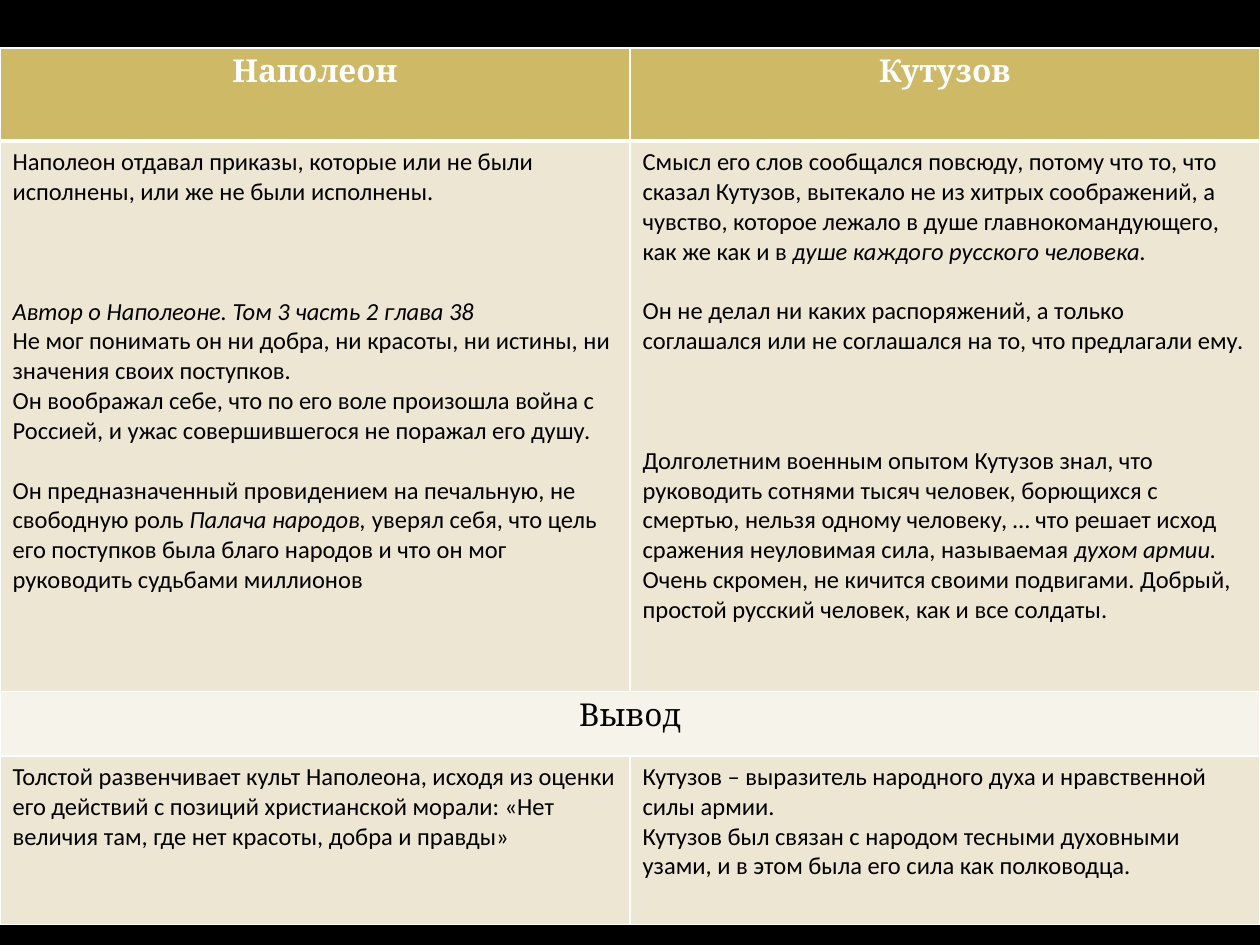
from dataclasses import dataclass

import pptx
import pptx.dml.color
import pptx.enum.text
import pptx.oxml
import pptx.oxml.ns
import pptx.util
from pptx.util import Inches


@dataclass(frozen=True)
class Theme:
    background: str = "000000"
    header: str = "CEB966"
    body: str = "EDE6D3"
    band: str = "F6F3EA"
    light: str = "FFFFFF"
    dark: str = "000000"
    heading_font: str = "Cambria"
    body_font: str = "Calibri"
    heading_size: int = 18
    body_size: int = 14
    line_pitch: float = 17.1


THEME = Theme()
HEADINGS = ["Наполеон", "Кутузов"]
CONCLUSION = "Вывод"

# Each paragraph: empty lines above it, then text with *italic* parts.
COMPARISON = [
    [
        (0, "Наполеон отдавал приказы, которые или не были исполнены, или же не были исполнены."),
        (3, "*Автор о Наполеоне. Том 3 часть 2 глава 38*"),
        (0, "Не мог понимать он ни добра, ни красоты, ни истины, ни значения своих поступков."),
        (0, "Он воображал себе, что по его воле произошла война с Россией, и ужас "
            "совершившегося не поражал его душу."),
        (1, "Он предназначенный провидением на печальную, не свободную роль *Палача народов, *"
            "уверял себя, что цель его поступков была благо народов и что он мог руководить "
            "судьбами миллионов"),
    ],
    [
        (0, "Смысл его слов сообщался повсюду, потому что то, что сказал Кутузов, вытекало не из "
            "хитрых соображений, а чувство, которое лежало в душе главнокомандующего, как же как "
            "и в *душе каждого русского человека.*"),
        (1, "Он не делал ни каких распоряжений, а только соглашался или не соглашался на то, "
            "что предлагали ему."),
        (3, "Долголетним военным опытом Кутузов знал, что руководить сотнями тысяч человек, "
            "борющихся с смертью, нельзя одному человеку, … что решает исход сражения "
            "неуловимая сила, называемая *духом армии.*"),
        (0, "Очень скромен, не кичится своими подвигами. Добрый, простой русский человек, "
            "как и все солдаты."),
    ],
]
RESULTS = [
    [
        (0, "Толстой развенчивает культ Наполеона, исходя из оценки его действий с позиций "
            "христианской морали: «Нет величия там, где нет красоты, добра и правды»"),
    ],
    [
        (0, "Кутузов – выразитель народного духа и нравственной силы армии."),
        (0, "Кутузов был связан с народом тесными духовными узами, и в этом была его сила "
            "как полководца."),
    ],
]


def rgb(value):
    return pptx.dml.color.RGBColor.from_string(value)


def style_run(r, font, size, color, bold=False, italic=False):
    r.font.name, r.font.size = font, pptx.util.Pt(size)
    r.font.bold, r.font.italic = bold, italic
    r.font.color.rgb = rgb(color)


def style_cell(cell, fill, bottom=1):
    """Draw the cell borders, widths in points, and fill the cell."""
    tc_pr = cell._tc.get_or_add_tcPr()
    for side, width in (("L", 1), ("R", 1), ("T", 1), ("B", bottom)):
        tc_pr.append(pptx.oxml.parse_xml(
            f'<a:ln{side} {pptx.oxml.ns.nsdecls("a")} w="{pptx.util.Pt(width)}">'
            f'<a:solidFill><a:srgbClr val="{THEME.light}"/></a:solidFill></a:ln{side}>'))
    cell.fill.solid()
    cell.fill.fore_color.rgb = rgb(fill)


def write_heading(cell, text, color, bold):
    cell.text_frame.text = text
    p = cell.text_frame.paragraphs[0]
    p.alignment = pptx.enum.text.PP_ALIGN.CENTER
    style_run(p.runs[0], THEME.heading_font, THEME.heading_size, color, bold)


def write_body(cell, paragraphs):
    tf = cell.text_frame
    for i, (gap, text) in enumerate(paragraphs):
        p = tf.add_paragraph() if i else tf.paragraphs[0]
        p.space_before = pptx.util.Pt(gap * THEME.line_pitch)
        for j, part in enumerate(text.split("*")):
            if part:
                r = p.add_run()
                r.text = part
                style_run(r, THEME.body_font, THEME.body_size, THEME.dark, italic=j % 2 == 1)


def add_comparison_table(s, left, top, width, row_heights):
    table = s.shapes.add_table(len(row_heights), len(HEADINGS), left, top,
                               width, sum(row_heights)).table
    table.first_row = table.horz_banding = False
    for row, height in zip(table.rows, row_heights):
        row.height = height

    fills = [THEME.header, THEME.body, THEME.band, THEME.body]
    for i, fill in enumerate(fills):
        for j in range(len(HEADINGS)):
            style_cell(table.cell(i, j), fill, bottom=1 if i else 3)

    for j, heading in enumerate(HEADINGS):
        write_heading(table.cell(0, j), heading, THEME.light, True)
        write_body(table.cell(1, j), COMPARISON[j])
        write_body(table.cell(3, j), RESULTS[j])
    table.cell(2, 0).merge(table.cell(2, 1))
    write_heading(table.cell(2, 0), CONCLUSION, THEME.dark, False)


def main():
    prs = pptx.Presentation()
    prs.slide_width, prs.slide_height = Inches(10), Inches(7.5)
    s = prs.slides.add_slide(prs.slide_layouts[6])
    s.background.fill.solid()
    s.background.fill.fore_color.rgb = rgb(THEME.background)
    add_comparison_table(s, 0, Inches(0.38), prs.slide_width,
                         [Inches(h) for h in (0.74, 4.37, 0.51, 1.34)])
    prs.save("out.pptx")


if __name__ == "__main__":
    main()
